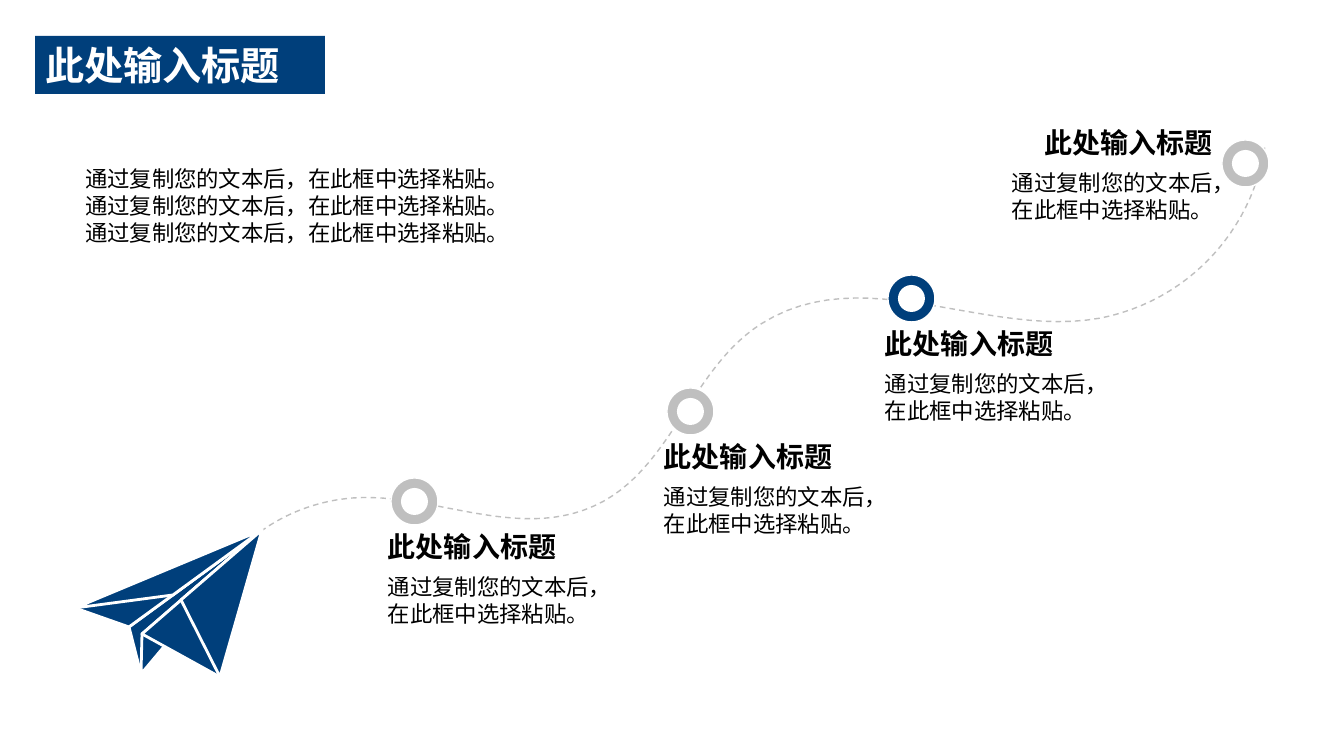
from pptx import Presentation
from pptx.dml.color import RGBColor
from pptx.enum.dml import MSO_LINE
from pptx.enum.shapes import MSO_SHAPE
from pptx.enum.text import MSO_ANCHOR, MSO_AUTO_SIZE, PP_ALIGN
from pptx.oxml.ns import qn
from pptx.util import Pt

EMU_PER_PX = 914400 / 100.8
FONT = "Arial"
COLORS = {"navy": "003F7B", "grey": "BFBFBF", "white": "FFFFFF", "black": "000000"}
HEADING = "此处输入标题"
SENTENCE = "通过复制您的文本后，在此框中选择粘贴。"

DISC, DOT = 47, 27
TEXT_W, HEADING_H, BODY_H = 243, 39, 68

# Disc left, disc top, colour, text on the left side
STEPS = [
    (391, 478, "grey", False),
    (667, 388, "grey", False),
    (888, 275, "navy", False),
    (1222, 140, "grey", True),
]

# Start point, then three control points for each Bézier segment
TRAIL = [
    (232, 557),
    (263, 523), (305, 502), (352, 498),
    (432, 492), (516, 541), (594, 506),
    (672, 471), (690, 369), (761, 324),
    (863, 259), (987, 339), (1101, 318),
    (1186, 301), (1252, 233), (1265, 146),
]

NOSE = (262, 530)
WING_TIP, WING_ROOT, WING_FOLD = (75, 608), (129, 627), (173, 595)
KEEL, KEEL_FOLD = (141, 674), (142, 634)
TAIL, TAIL_FOLD = (220, 677), (181, 600)
PLANE_PANELS = [
    (WING_ROOT, KEEL),
    (KEEL_FOLD, KEEL),
    (WING_TIP, WING_ROOT),
    (KEEL_FOLD, TAIL),
    (TAIL_FOLD, TAIL),
    (WING_TIP, WING_FOLD),
]


def px(n):
    return round(n * EMU_PER_PX)


def rgb(name):
    return RGBColor.from_string(COLORS[name])


def paint(s, fill=None, line=None, width=1):
    s.shadow.inherit = False
    if fill:
        s.fill.solid()
        s.fill.fore_color.rgb = rgb(fill)
    else:
        s.fill.background()
    if line:
        s.line.color.rgb = rgb(line)
        s.line.width = Pt(width)
    else:
        s.line.fill.background()


def place(s, x, y, w, h):
    s.left, s.top, s.width, s.height = px(x), px(y), px(w), px(h)


def write(s, paragraphs, size, color="black", bold=False,
          anchor=MSO_ANCHOR.TOP, align=PP_ALIGN.LEFT):
    tf = s.text_frame
    tf.word_wrap = True
    tf.auto_size = MSO_AUTO_SIZE.NONE
    tf.vertical_anchor = anchor
    for i, text in enumerate(paragraphs):
        p = tf.paragraphs[0] if i == 0 else tf.add_paragraph()
        p.alignment = align
        p.space_before = Pt(0)
        r = p.add_run()
        r.text = text
        r.font.name = FONT
        r.font.size = Pt(size)
        r.font.bold = bold
        r.font.color.rgb = rgb(color)


def remove_bullets(s):
    for p in s.text_frame.paragraphs:
        pPr = p._p.get_or_add_pPr()
        pPr.set("marL", "0")
        pPr.set("indent", "0")
        pPr.append(pPr.makeelement(qn("a:buNone"), {}))


def add_outline(slide, points, closed):
    points = [(px(x), px(y)) for x, y in points]
    builder = slide.shapes.build_freeform(*points[0])
    builder.add_line_segments(points[1:], close=closed)
    return builder.convert_to_shape()


def curve_points(controls, steps=24):
    points = [controls[0]]
    for i in range(0, len(controls) - 1, 3):
        axes = list(zip(*controls[i:i + 4]))
        for k in range(1, steps + 1):
            t = k / steps
            u = 1 - t
            weights = (u ** 3, 3 * u * u * t, 3 * u * t * t, t ** 3)
            points.append(tuple(sum(w * c for w, c in zip(weights, axis))
                                for axis in axes))
    return points


def add_trail(slide):
    s = add_outline(slide, curve_points(TRAIL), closed=False)
    paint(s, line="grey")
    s.line.dash_style = MSO_LINE.DASH


def add_plane(slide):
    for a, b in PLANE_PANELS:
        s = add_outline(slide, [a, b, NOSE], closed=True)
        paint(s, "navy", "white", 2)


def add_circle(slide, x, y, d, fill, line=None):
    s = slide.shapes.add_shape(MSO_SHAPE.OVAL, px(x), px(y), px(d), px(d))
    paint(s, fill, line)


def add_label(slide, x, y, h, text, size, **style):
    s = slide.shapes.add_textbox(px(x), px(y), px(TEXT_W), px(h))
    write(s, [text], size, **style)


def add_step(slide, x, y, color, text_left):
    add_circle(slide, x, y, DISC, color, "white")
    inset = (DISC - DOT) // 2
    add_circle(slide, x + inset, y + inset, DOT, "white")
    if text_left:
        left, top, align = x - TEXT_W + 1, y - 15, PP_ALIGN.RIGHT
    else:
        left, top, align = x - 13, y + 51, PP_ALIGN.LEFT
    add_label(slide, left, top, HEADING_H, HEADING, 20, bold=True,
              anchor=MSO_ANCHOR.BOTTOM, align=align)
    add_label(slide, left, top + HEADING_H, BODY_H, SENTENCE, 16, align=align)


def main():
    prs = Presentation()
    prs.slide_width, prs.slide_height = px(1344), px(756)
    slide = prs.slides.add_slide(prs.slide_layouts[1])

    # Title bar
    title = slide.shapes.title
    place(title, 35, 36, 290, 58)
    title.fill.solid()
    title.fill.fore_color.rgb = rgb("navy")
    write(title, [HEADING], 28, "white", True, MSO_ANCHOR.MIDDLE)

    # Introduction
    body = slide.placeholders[1]
    place(body, 75, 160, 448, 110)
    write(body, [SENTENCE * 2, SENTENCE], 16)
    remove_bullets(body)

    # Paper plane and its flight path
    add_trail(slide)
    add_plane(slide)

    # Steps along the path
    for step in STEPS:
        add_step(slide, *step)

    prs.save("out.pptx")


if __name__ == "__main__":
    main()
